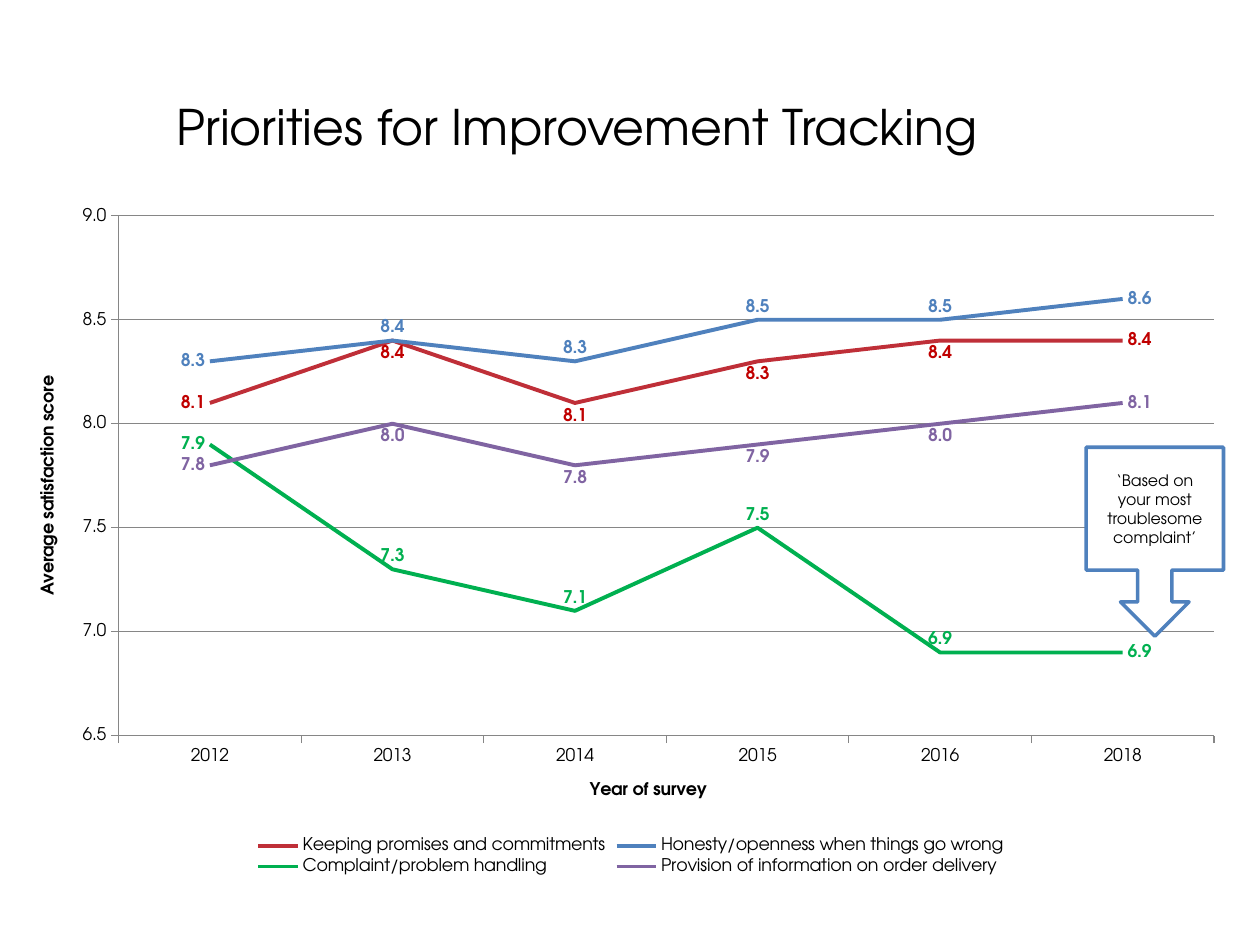
from lxml.etree import SubElement
from pptx import Presentation
from pptx.chart.data import CategoryChartData
from pptx.dml.color import RGBColor
from pptx.enum.chart import XL_CHART_TYPE, XL_LABEL_POSITION, XL_LEGEND_POSITION, XL_MARKER_STYLE, XL_TICK_MARK
from pptx.enum.shapes import MSO_SHAPE
from pptx.enum.text import MSO_ANCHOR, PP_ALIGN
from pptx.oxml.ns import qn
from pptx.util import Inches, Pt

FONT = "TeX Gyre Adventor"
COLORS = {
    "text": "000000",
    "white": "FFFFFF",
    "axis": "868686",
    "red": "BF2F38",
    "red label": "C00000",
    "blue": "4F81BD",
    "green": "00B050",
    "purple": "8064A2",
}
YEARS = ["2012", "2013", "2014", "2015", "2016", "2018"]
ABOVE, BELOW = XL_LABEL_POSITION.ABOVE, XL_LABEL_POSITION.BELOW
# Name, scores, line colour, label colour, label position
SERIES = [
    ("Keeping promises and commitments", (8.1, 8.4, 8.1, 8.3, 8.4, 8.4), "red", "red label", BELOW),
    ("Honesty/openness when things go wrong", (8.3, 8.4, 8.3, 8.5, 8.5, 8.6), "blue", "blue", ABOVE),
    ("Complaint/problem handling", (7.9, 7.3, 7.1, 7.5, 6.9, 6.9), "green", "green", ABOVE),
    ("Provision of information on order delivery", (7.8, 8.0, 7.8, 7.9, 8.0, 8.1), "purple", "purple", BELOW),
]


def rgb(name):
    return RGBColor.from_string(COLORS[name])


def set_font(font, size, color="text", bold=False):
    font.name = FONT
    font.size = Pt(size)
    font.bold = bold
    font.color.rgb = rgb(color)


def set_line(line, color, width):
    line.color.rgb = rgb(color)
    line.width = Pt(width)


def add_title(slide, text):
    title = slide.shapes.title
    title.left, title.top, title.width, title.height = map(Inches, (1.3, 0.25, 8.43, 0.98))
    frame = title.text_frame
    frame.text = text
    frame.vertical_anchor = MSO_ANCHOR.BOTTOM
    frame.margin_bottom = 0
    frame.paragraphs[0].alignment = PP_ALIGN.LEFT
    set_font(frame.paragraphs[0].font, 28)


def format_axis(axis, title):
    axis.major_tick_mark = XL_TICK_MARK.OUTSIDE
    axis.minor_tick_mark = XL_TICK_MARK.NONE
    set_line(axis.format.line, "axis", 0.75)
    set_font(axis.tick_labels.font, 10)
    frame = axis.axis_title.text_frame
    frame.text = title
    set_font(frame.paragraphs[0].font, 10, bold=True)


def format_series(series, color, label_color, position):
    series.smooth = False
    series.marker.style = XL_MARKER_STYLE.NONE
    set_line(series.format.line, color, 2.25)
    labels = series.data_labels
    labels.show_value = True
    labels.number_format = "#,##0.0"
    labels.number_format_is_linked = False
    labels.position = position
    set_font(labels.font, 10, label_color, bold=True)
    ends = ((0, XL_LABEL_POSITION.LEFT), (len(YEARS) - 1, XL_LABEL_POSITION.RIGHT))
    for index, end_position in ends:
        label = series.points[index].data_label
        set_font(label.font, 10, label_color, bold=True)
        label.position = end_position


def set_plot_layout(chart, left, top, width, height):
    """Fix the inner plot area, in fractions of the chart."""
    plot_area = chart.plots[0]._element.getparent()
    for old_layout in plot_area.findall(qn("c:layout")):
        plot_area.remove(old_layout)
    layout = SubElement(plot_area, qn("c:layout"))
    plot_area.insert(0, layout)
    manual = SubElement(layout, qn("c:manualLayout"))
    settings = {"layoutTarget": "inner", "xMode": "edge", "yMode": "edge",
                "x": left, "y": top, "w": width, "h": height}
    for tag, value in settings.items():
        SubElement(manual, qn(f"c:{tag}")).set("val", str(value))


def add_score_chart(slide):
    data = CategoryChartData(number_format="0.0")
    data.categories = YEARS
    for name, scores, *_ in SERIES:
        data.add_series(name, scores)
    chart = slide.shapes.add_chart(
        XL_CHART_TYPE.LINE, Inches(0.28), Inches(1.55), Inches(9.45), Inches(5.43), data
    ).chart
    set_font(chart.font, 10)
    chart.has_title = False
    chart.has_legend = True
    chart.legend.position = XL_LEGEND_POSITION.BOTTOM
    chart.legend.include_in_layout = False
    set_font(chart.legend.font, 10)

    format_axis(chart.category_axis, "Year of survey")
    value_axis = chart.value_axis
    format_axis(value_axis, "Average satisfaction score")
    value_axis.minimum_scale, value_axis.maximum_scale = 6.5, 9
    value_axis.major_unit = 0.5
    value_axis.tick_labels.number_format = "0.0"
    value_axis.tick_labels.number_format_is_linked = False
    value_axis.has_major_gridlines = True
    set_line(value_axis.major_gridlines.format.line, "axis", 0.75)

    plot = chart.plots[0]
    plot.vary_by_categories = False
    for series, (_, _, *style) in zip(plot.series, SERIES):
        format_series(series, *style)
    set_plot_layout(chart, 0.07, 0.03, 0.92, 0.76)


def add_callout(slide, text):
    callout = slide.shapes.add_shape(
        MSO_SHAPE.DOWN_ARROW_CALLOUT, Inches(8.62), Inches(3.55), Inches(1.09), Inches(1.5)
    )
    callout.shadow.inherit = False
    callout.fill.solid()
    callout.fill.fore_color.rgb = rgb("white")
    set_line(callout.line, "blue", 2)
    frame = callout.text_frame
    frame.word_wrap = True
    frame.text = text
    frame.vertical_anchor = MSO_ANCHOR.MIDDLE
    frame.paragraphs[0].alignment = PP_ALIGN.CENTER
    set_font(frame.paragraphs[0].font, 9)


def main():
    presentation = Presentation()
    presentation.slide_width, presentation.slide_height = Inches(10), Inches(7.5)
    slide = presentation.slides.add_slide(presentation.slide_layouts[5])
    add_title(slide, "Priorities for Improvement Tracking")
    add_score_chart(slide)
    add_callout(slide, "‘Based on your most troublesome complaint’")
    presentation.save("out.pptx")


if __name__ == "__main__":
    main()
